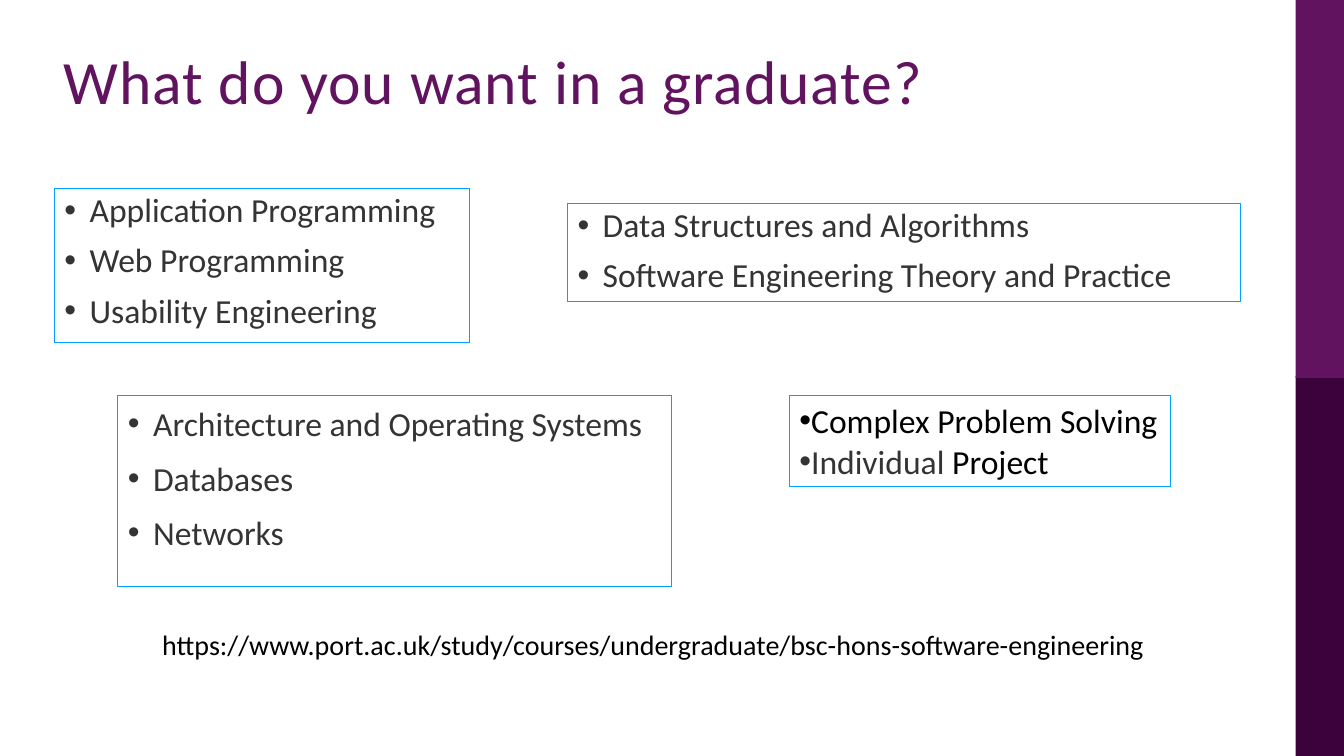
from lxml.etree import SubElement
from pptx import Presentation
from pptx.dml.color import RGBColor
from pptx.enum.shapes import MSO_SHAPE
from pptx.enum.text import MSO_ANCHOR, PP_ALIGN
from pptx.oxml.ns import qn
from pptx.util import Inches, Pt

PURPLE = RGBColor(0x62, 0x13, 0x60)
DARK_PURPLE = RGBColor(0x3C, 0x02, 0x3C)
BLUE = RGBColor(0x00, 0xA0, 0xFF)
GREY = RGBColor(0x34, 0x34, 0x34)
BLACK = RGBColor(0x00, 0x00, 0x00)
FONT = "Calibri"


def style_font(font, size, color):
    """Apply the slide typeface with a size and colour."""
    font.name = FONT
    font.size = Pt(size)
    font.color.rgb = color


def add_rectangle(slide, box):
    """Add a shadowless rectangle in a box given in inches."""
    shape = slide.shapes.add_shape(MSO_SHAPE.RECTANGLE, *map(Inches, box))
    shape.shadow.inherit = False
    return shape


def add_side_band(slide, left, width):
    """Draw the two purple blocks along the right edge."""
    for top, height, color in ((3.73, 3.77, DARK_PURPLE), (0, 3.75, PURPLE)):
        block = add_rectangle(slide, (left, top, width, height))
        block.fill.solid()
        block.fill.fore_color.rgb = color
        block.line.fill.background()


def add_text(slide, box, text, size, color):
    """Add a single paragraph of plain text and return it."""
    text_frame = slide.shapes.add_textbox(*map(Inches, box)).text_frame
    text_frame.word_wrap = True
    text_frame.text = text
    paragraph = text_frame.paragraphs[0]
    style_font(paragraph.runs[0].font, size, color)
    return paragraph


def add_title(slide, box, text):
    """Add the heading with tight lines and spaced letters."""
    paragraph = add_text(slide, box, text, 44, PURPLE)
    paragraph.line_spacing = Pt(36)
    paragraph.runs[0].font._element.set("spc", "70")


def add_module_box(slide, box, items, indent=0.25, line_spacing=1.0, space=10, top_inset=0.05):
    """Draw an outlined bullet list whose items are lists of text and colour."""
    shape = add_rectangle(slide, box)
    shape.fill.background()
    shape.line.color.rgb = BLUE
    shape.line.width = Pt(0.75)
    text_frame = shape.text_frame
    text_frame.word_wrap = True
    text_frame.vertical_anchor = MSO_ANCHOR.TOP
    text_frame.margin_top = Inches(top_inset)
    for index, item in enumerate(items):
        paragraph = text_frame.add_paragraph() if index else text_frame.paragraphs[0]
        paragraph.alignment = PP_ALIGN.LEFT
        paragraph.line_spacing = line_spacing
        paragraph.space_before = Pt(space if index else 0)
        properties = paragraph._p.get_or_add_pPr()
        properties.set("marL", str(Inches(indent)))
        properties.set("indent", str(-Inches(indent)))
        SubElement(properties, qn("a:buFont"), typeface="Arial")
        SubElement(properties, qn("a:buChar"), char="•")
        for text, color in item:
            run = paragraph.add_run()
            run.text = text
            style_font(run.font, 24, color)


def grey_items(*names):
    """Turn module names into single-colour list items."""
    return [[(name, GREY)] for name in names]


def build_slide(slide):
    """Place the title, the module boxes and the course address."""
    add_side_band(slide, 12.85, 0.49)
    add_title(slide, (0.53, 0.61, 12.19, 1.24), "What do you want in a graduate?")
    add_module_box(
        slide, (0.54, 1.87, 4.12, 1.53),
        grey_items("Application Programming", "Web Programming", "Usability Engineering"),
        line_spacing=0.9)
    add_module_box(
        slide, (5.63, 2.02, 6.67, 0.97),
        grey_items("Data Structures and Algorithms", "Software Engineering Theory and Practice"),
        line_spacing=0.9)
    add_module_box(
        slide, (7.83, 3.92, 3.78, 0.91),
        [[("Complex Problem Solving", BLACK)], [("Individual", GREY), (" Project", BLACK)]],
        indent=0, space=0)
    add_module_box(
        slide, (1.17, 3.92, 5.49, 1.9),
        grey_items("Architecture and Operating Systems", "Databases", "Networks"),
        top_inset=0.08)
    add_text(
        slide, (1.51, 6.18, 9.96, 0.44),
        "https://www.port.ac.uk/study/courses/undergraduate/bsc-hons-software-engineering",
        20, BLACK)


def main():
    """Create and save the presentation."""
    presentation = Presentation()
    presentation.slide_width = Inches(13.33)
    presentation.slide_height = Inches(7.5)
    build_slide(presentation.slides.add_slide(presentation.slide_layouts[6]))
    presentation.save("out.pptx")


if __name__ == "__main__":
    main()
